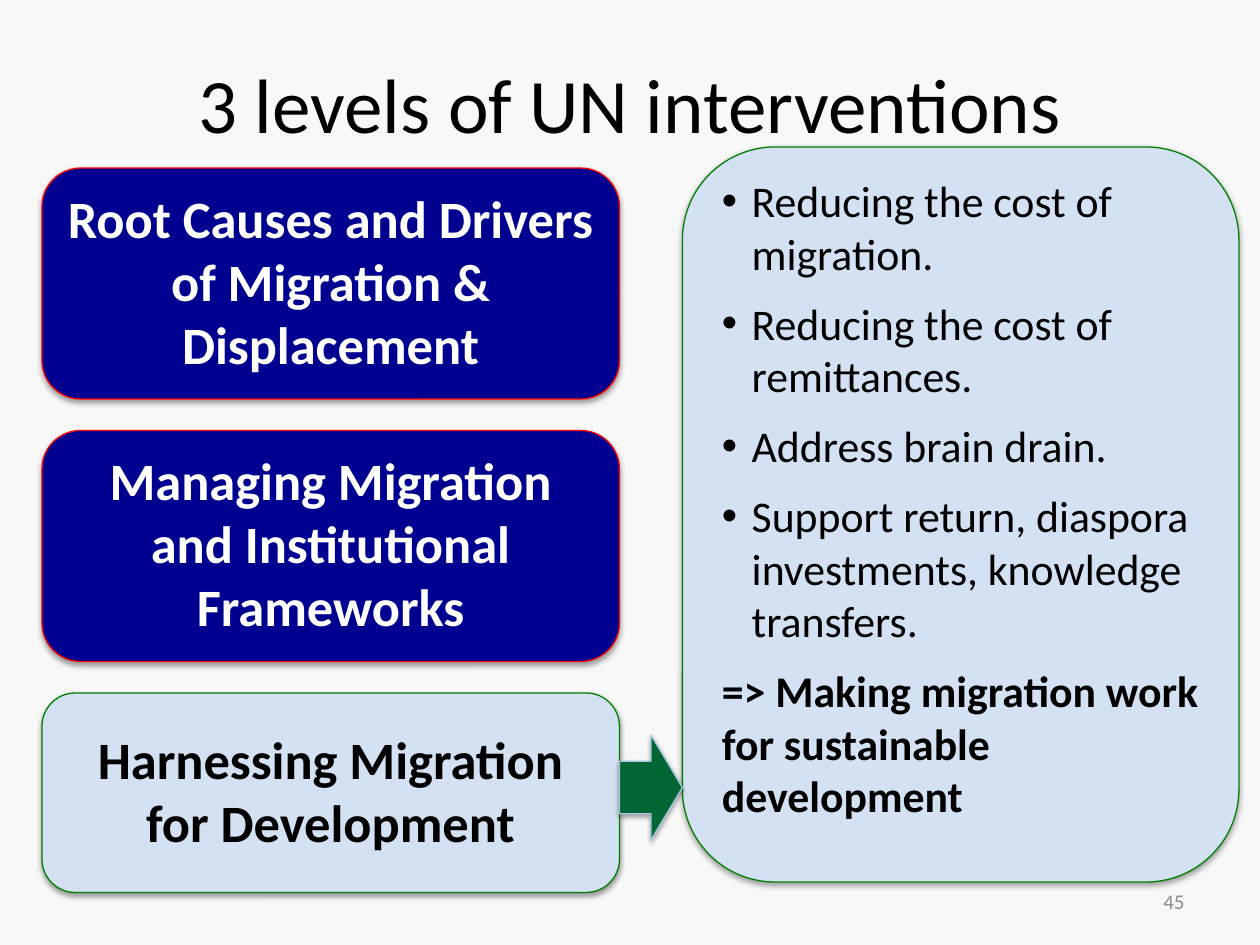
from dataclasses import dataclass

from lxml.etree import SubElement
from pptx import Presentation
from pptx.dml.color import RGBColor
from pptx.enum.shapes import MSO_SHAPE as Shape
from pptx.enum.text import MSO_ANCHOR as Anchor, PP_ALIGN as Align
from pptx.oxml.ns import qn
from pptx.util import Pt

FONT = "Calibri"
COLORS = {
    "background": "F8F8F8", "navy": "000090", "red": "FF0000",
    "pale": "D3E1F2", "green": "008000", "arrow": "006633",
    "arrow_edge": "A8C5E3", "black": "000000", "white": "FFFFFF",
    "grey": "8C8C8C",
}


@dataclass
class Level:
    text: str
    height: float
    fill: str
    line: str
    ink: str


LEVELS = [
    Level("Root Causes and Drivers of Migration & Displacement", 132, "navy", "red", "white"),
    Level("Managing Migration and Institutional Frameworks", 132, "navy", "red", "white"),
    Level("Harnessing Migration for Development", 114, "pale", "green", "black"),
]
ACTIONS = [
    "Reducing the cost of migration.",
    "Reducing the cost of remittances.",
    "Address brain drain.",
    "Support return, diaspora investments, knowledge transfers.",
]
GOAL = "=> Making migration work for sustainable development"
LEVEL_LEFT, LEVEL_TOP, LEVEL_WIDTH, LEVEL_STEP = 24, 96, 330, 150
PANEL_LEFT = 390


def rgb(name: str) -> RGBColor:
    return RGBColor.from_string(COLORS[name])


def add_run(p, text: str, size: float, color: str, bold: bool = False) -> None:
    r = p.add_run()
    r.text = text
    r.font.name, r.font.size, r.font.bold = FONT, Pt(size), bold
    r.font.color.rgb = rgb(color)


def add_shadow(s) -> None:
    s.shadow.inherit = False
    effects = s._element.spPr.find(qn("a:effectLst"))
    shadow = SubElement(effects, qn("a:outerShdw"), blurRad=str(Pt(3.1)),
                        dist=str(Pt(1.6)), dir="5400000", rotWithShape="0")
    color = SubElement(shadow, qn("a:srgbClr"), val=COLORS["black"])
    SubElement(color, qn("a:alpha"), val="38000")


def add_block(slide, kind, left: float, top: float, width: float, height: float,
              fill: str, line: str):
    s = slide.shapes.add_shape(kind, Pt(left), Pt(top), Pt(width), Pt(height))
    s.fill.solid()
    s.fill.fore_color.rgb = rgb(fill)
    s.line.color.rgb = rgb(line)
    s.line.width = Pt(0.75)
    add_shadow(s)
    tf = s.text_frame
    tf.word_wrap = True
    tf.margin_top, tf.margin_bottom = Pt(0), Pt(3.6)
    return s


def add_bullet(p) -> None:
    pPr = p._p.get_or_add_pPr()
    pPr.set("marL", str(Pt(17)))
    pPr.set("indent", str(Pt(-17)))
    SubElement(pPr, qn("a:buFont"), typeface="Arial")
    SubElement(pPr, qn("a:buChar"), char="•")


def add_level(slide, level: Level, top: float) -> None:
    s = add_block(slide, Shape.ROUNDED_RECTANGLE, LEVEL_LEFT, top, LEVEL_WIDTH,
                  level.height, level.fill, level.line)
    s.text_frame.vertical_anchor = Anchor.MIDDLE
    p = s.text_frame.paragraphs[0]
    p.alignment = Align.CENTER
    add_run(p, level.text, 30, level.ink, bold=True)


def add_panel(slide) -> None:
    s = add_block(slide, Shape.ROUNDED_RECTANGLE, PANEL_LEFT, 84, 318, 420, "pale", "green")
    tf = s.text_frame
    tf.vertical_anchor = Anchor.TOP
    for i, text in enumerate([*ACTIONS, GOAL]):
        p = tf.add_paragraph() if i else tf.paragraphs[0]
        p.alignment = Align.LEFT
        p.space_after = Pt(10)
        if text != GOAL:
            add_bullet(p)
        add_run(p, text, 25, "black", bold=text == GOAL)


def main() -> None:
    prs = Presentation()
    prs.slide_width, prs.slide_height = Pt(720), Pt(540)
    slide = prs.slides.add_slide(prs.slide_layouts[5])
    slide.background.fill.solid()
    slide.background.fill.fore_color.rgb = rgb("background")

    # Title
    title = slide.shapes.title
    title.left, title.top, title.width, title.height = Pt(36), Pt(21.6), Pt(648), Pt(74)
    title.text_frame.vertical_anchor = Anchor.MIDDLE
    p = title.text_frame.paragraphs[0]
    p.alignment = Align.CENTER
    add_run(p, "3 levels of UN interventions", 44, "black")

    # Page number
    number = slide.shapes.add_textbox(Pt(516), Pt(500.5), Pt(168), Pt(28.75))
    tf = number.text_frame
    tf.word_wrap = True
    tf.vertical_anchor = Anchor.MIDDLE
    p = tf.paragraphs[0]
    p.alignment = Align.RIGHT
    add_run(p, "45", 12, "grey")

    # Intervention levels
    for i, level in enumerate(LEVELS):
        add_level(slide, level, LEVEL_TOP + i * LEVEL_STEP)

    # Actions for the third level, with the arrow leading to them
    add_panel(slide)
    arrow_left = LEVEL_LEFT + LEVEL_WIDTH
    add_block(slide, Shape.RIGHT_ARROW, arrow_left, 420, PANEL_LEFT - arrow_left, 60,
              "arrow", "arrow_edge")

    prs.save("out.pptx")


if __name__ == "__main__":
    main()
